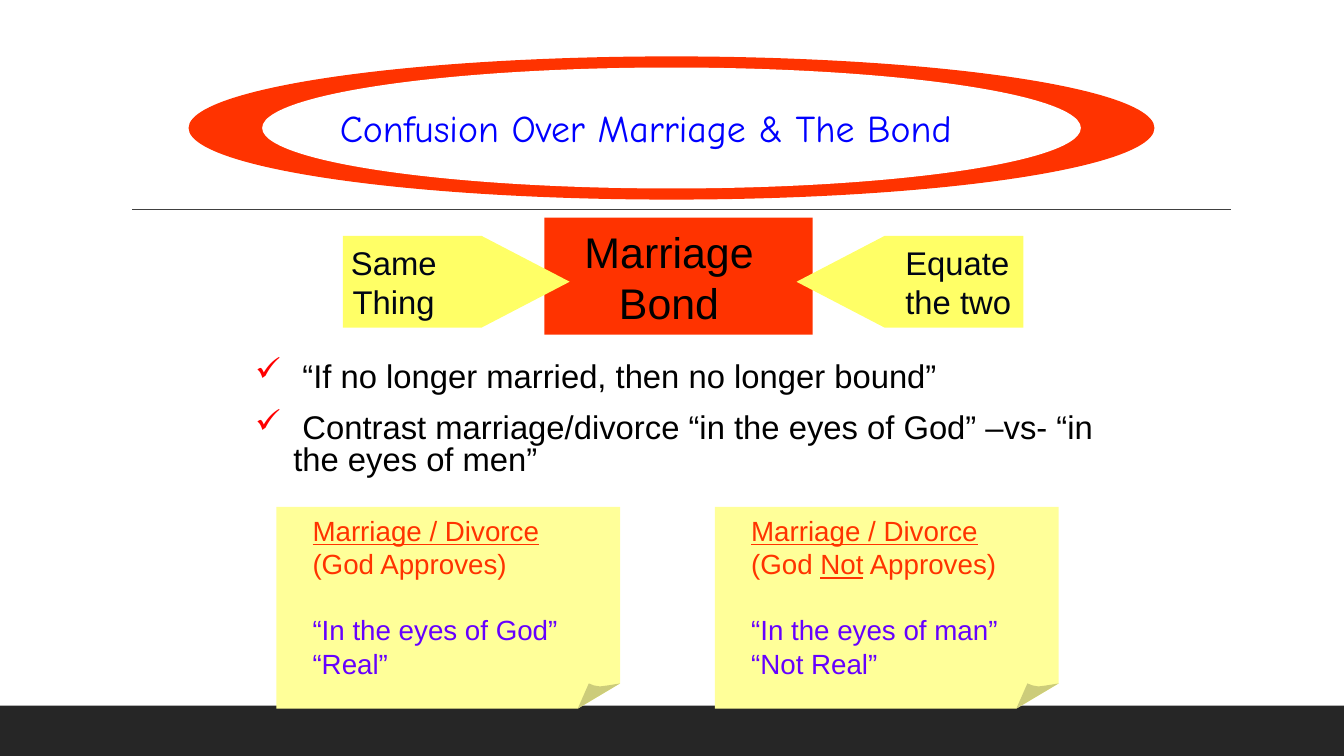
from lxml import etree
from pptx import Presentation
from pptx.dml.color import RGBColor
from pptx.enum import shapes, text
from pptx.oxml.ns import qn
from pptx.util import Inches, Pt

COLORS = {
    "white": "FFFFFF", "band": "262626", "rule": "404040", "red": "FF3300",
    "arrow": "FFFF66", "note": "FFFF99", "fold": "CCCC7A", "blue": "0000FF",
    "black": "000000", "ink": "000514", "purple": "6600FF", "check": "FF0000",
}
LEFT, CENTER = text.PP_ALIGN.LEFT, text.PP_ALIGN.CENTER


def paint(shape, color):
    shape.shadow.inherit = False
    shape.fill.solid()
    shape.fill.fore_color.rgb = RGBColor.from_string(COLORS[color])
    shape.line.fill.background()


def write(box, words, size, color, font="Arial", align=LEFT, margins=(0, 0, 0, 0),
          before=0, spacing=None, bullet=None):
    """Add one paragraph to a box; words between underscores are underlined."""
    frame = box.text_frame
    frame.word_wrap = True
    frame.auto_size = text.MSO_AUTO_SIZE.NONE
    frame.vertical_anchor = text.MSO_ANCHOR.MIDDLE
    (frame.margin_left, frame.margin_top,
     frame.margin_right, frame.margin_bottom) = map(Inches, margins)
    paragraph = frame.add_paragraph() if frame.text else frame.paragraphs[0]
    if bullet:
        props = paragraph._p.get_or_add_pPr()
        props.set("marL", str(Inches(0.41)))
        props.set("indent", str(Inches(-0.38)))
        bullet_color = etree.SubElement(props, qn("a:buClr"))
        etree.SubElement(bullet_color, qn("a:srgbClr"), val=COLORS["check"])
        etree.SubElement(props, qn("a:buChar"), char=bullet)
    paragraph.alignment = align
    paragraph.space_before = Pt(before)
    if spacing:
        paragraph.line_spacing = spacing
    for index, part in enumerate(words.split("_")):
        if part:
            run = paragraph.add_run()
            run.text = part
            run.font.name = font
            run.font.size = Pt(size)
            run.font.underline = index % 2 == 1
            run.font.color.rgb = RGBColor.from_string(COLORS[color])


deck = Presentation()
deck.slide_width, deck.slide_height = Inches(13.33), Inches(7.5)
slide = deck.slides.add_slide(deck.slide_layouts[5])
canvas = slide.shapes

# Bottom band, rule, oval ring and the red block
for kind, at, color in [
    (shapes.MSO_SHAPE.RECTANGLE, (0, 7, 13.33, 0.5), "band"),
    (shapes.MSO_SHAPE.OVAL, (1.87, 0.56, 9.58, 1.42), "red"),
    (shapes.MSO_SHAPE.OVAL, (2.6, 0.67, 8.12, 1.2), "white"),
    (shapes.MSO_SHAPE.RECTANGLE, (5.4, 2.16, 2.66, 1.16), "red"),
]:
    paint(canvas.add_shape(kind, *map(Inches, at)), color)

rule = canvas.add_connector(shapes.MSO_CONNECTOR.STRAIGHT, Inches(1.31), Inches(2.08),
                            Inches(12.21), Inches(2.08))
rule.line.color.rgb = RGBColor.from_string(COLORS["rule"])
rule.line.width = Pt(1)
etree.SubElement(rule.element.spPr, qn("a:effectLst"))

# Title, brought in front of the ring
title = canvas.title
title.left, title.top, title.width, title.height = map(Inches, (3.33, 1, 6.98, 0.53))
title.element.getparent().append(title.element)
write(title, "Confusion Over Marriage & The Bond", 27, "blue", font="Comic Neue",
      margins=(0.04, 0.04, 0.08, 0.04))

# Arrows pointing at the block from both sides
for left, turn in [(3.4, 0), (7.9, 180)]:
    arrow = canvas.add_shape(shapes.MSO_SHAPE.PENTAGON, Inches(left), Inches(2.34),
                             Inches(2.25), Inches(0.91))
    arrow.adjustments[0] = 0.96
    arrow.rotation = turn
    paint(arrow, "arrow")

for at, lines, size, color, align in [
    ((5.69, 2.23, 1.89, 1.03), ["Marriage", "Bond"], 30.6, "black", CENTER),
    ((3.46, 2.4, 0.89, 0.79), ["Same", "Thing"], 23.4, "ink", CENTER),
    ((8.98, 2.4, 1.15, 0.79), ["Equate", "the two"], 23.4, "ink", LEFT),
]:
    label = canvas.add_textbox(*map(Inches, at))
    for line in lines:
        write(label, line, size, color, align=align)

# Check-marked statements
statements = canvas.add_textbox(Inches(2.5), Inches(3.51), Inches(8.6), Inches(1.32))
for before, line in [
    (0, " “If no longer married, then no longer bound”"),
    (14.4, " Contrast marriage/divorce “in the eyes of God” –vs- “in the eyes of men”"),
]:
    write(statements, line, 23.4, "black", before=before, spacing=0.8, bullet="✓")

# Two sticky notes with a folded corner
note_outline = [(0, 0), (0, 2), (2.99, 2), (3.41, 1.75), (3.41, 0)]
fold_outline = [(2.99, 2), (3.1, 1.75), (3.15, 1.77), (3.21, 1.78), (3.29, 1.77), (3.41, 1.75)]
for left, approval, view, verdict in [
    (2.74, "(God Approves)", "“In the eyes of God”", "“Real”"),
    (7.09, "(God _Not_ Approves)", "“In the eyes of man”", "“Not Real”"),
]:
    for outline, color in [(note_outline, "note"), (fold_outline, "fold")]:
        corners = [(Inches(left + x), Inches(5.03 + y)) for x, y in outline]
        pen = canvas.build_freeform(*corners[0])
        pen.add_line_segments(corners[1:], close=True)
        paint(pen.convert_to_shape(), color)
    note = canvas.add_textbox(Inches(left + 0.3), Inches(5.05), Inches(2.86), Inches(1.74))
    for line, color, before in [
        ("_Marriage / Divorce_", "red", 0), (approval, "red", 0),
        (view, "purple", 23.5), (verdict, "purple", 0),
    ]:
        write(note, line, 19.8, color, margins=(0.06, 0.04, 0.1, 0.04), before=before)

deck.save("out.pptx")
